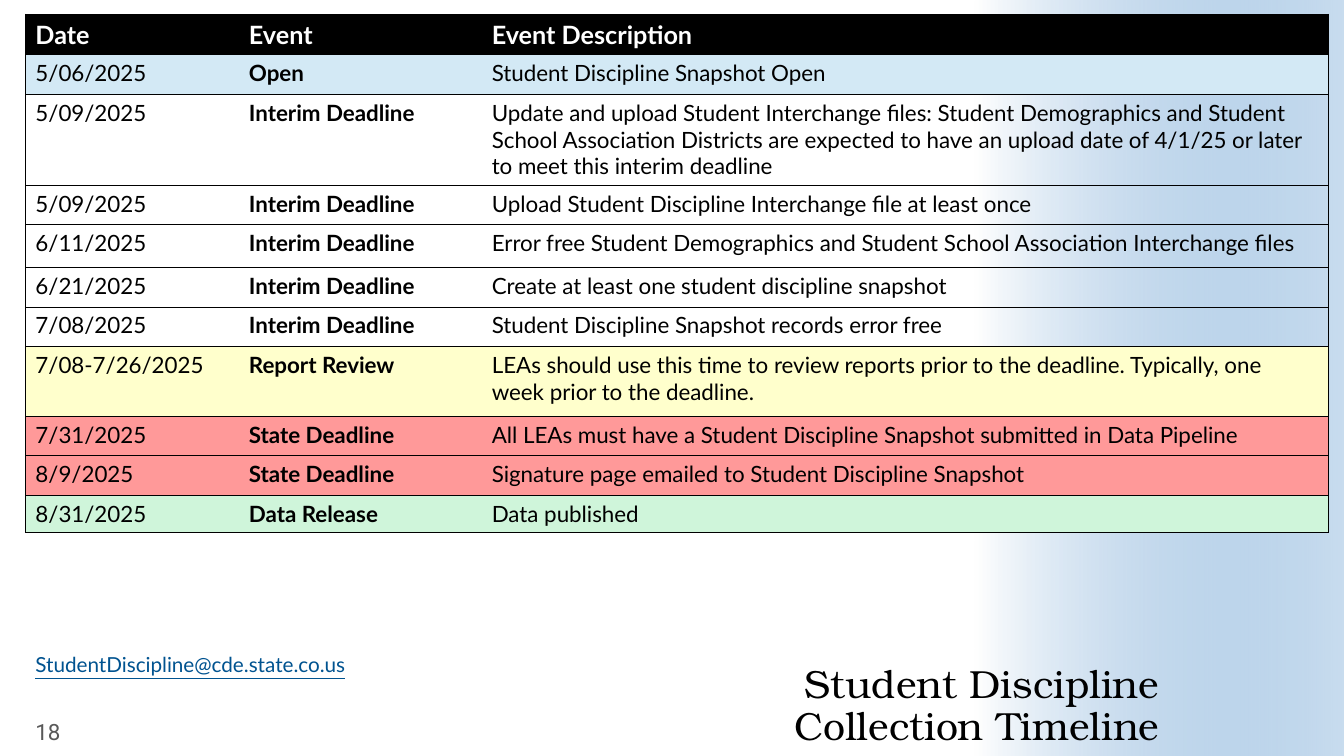
from copy import deepcopy
from dataclasses import dataclass

from lxml.etree import SubElement
from pptx import Presentation
from pptx.dml.color import RGBColor
from pptx.enum.shapes import MSO_SHAPE as Preset
from pptx.enum.text import MSO_ANCHOR as Anchor, MSO_AUTO_SIZE as AutoSize, PP_ALIGN as Align
from pptx.oxml.ns import qn
from pptx.util import Cm, Pt


@dataclass(frozen=True)
class Theme:
    black: str = "000000"
    white: str = "FFFFFF"
    grey: str = "595959"
    link: str = "005390"
    band: str = "488BC9"
    opened: str = "D3E9F5"
    review: str = "FFFFCC"
    deadline: str = "FF9999"
    release: str = "CFF5DA"
    title_font: str = "TeX Gyre Bonum"
    table_font: str = "Lato"
    number_font: str = "Roboto"
    title_size: float = 28
    header_size: float = 18
    body_size: float = 16
    contact_size: float = 14.8


theme = Theme()


def write_text(frame, text, *, font, size, color, bold=False, underline=False,
               align=Align.LEFT, spacing=1.0, anchor=Anchor.TOP):
    frame.word_wrap = True
    frame.vertical_anchor = anchor
    paragraph = frame.paragraphs[0]
    paragraph.text = text
    paragraph.alignment = align
    paragraph.line_spacing = spacing
    paragraph.space_before = Pt(0)
    for run in paragraph.runs:
        run.font.name = font
        run.font.size = Pt(size)
        run.font.bold = bold
        run.font.underline = underline
        run.font.color.rgb = RGBColor.from_string(color)
    # Line breaks take the same format as the text around them
    for line_break in paragraph._p.findall(qn("a:br")):
        line_break.insert(0, deepcopy(paragraph.runs[0]._r.rPr))
    return paragraph


def add_border(cell, side, color, width=0.5):
    line = SubElement(cell._tc.get_or_add_tcPr(), qn(f"a:ln{side}"), w=str(Pt(width)))
    SubElement(SubElement(line, qn("a:solidFill")), qn("a:srgbClr"), val=color)


presentation = Presentation()
presentation.slide_width, presentation.slide_height = Cm(33.87), Cm(19.05)
slide = presentation.slides.add_slide(presentation.slide_layouts[1])

# Gradient band behind everything
band = slide.shapes.add_shape(Preset.RECTANGLE, Cm(19.69), Cm(4.88), Cm(19.05), Cm(9.3))
band.rotation = 270
band.shadow.inherit = False
band.line.fill.background()
band.fill.gradient()
band.fill.gradient_angle = 270
for stop, color in zip(band.fill.gradient_stops, (theme.white, theme.band)):
    stop.color.rgb = RGBColor.from_string(color)
band_colors = list(band._element.spPr.iter(qn("a:srgbClr")))
SubElement(band_colors[-1], qn("a:alpha"), val="30000")
slide.shapes._spTree.insert(2, band._element)

# Title
title = slide.shapes.title
title.left, title.top, title.width, title.height = Cm(10.82), Cm(16.38), Cm(18.39), Cm(2.49)
title_frame = title.text_frame
title_frame.auto_size = AutoSize.NONE
title_frame.margin_left = title_frame.margin_right = 0
title_frame.margin_top = title_frame.margin_bottom = 0
write_text(title_frame, "Student Discipline\vCollection Timeline", font=theme.title_font,
           size=theme.title_size, color=theme.black, align=Align.RIGHT, spacing=0.9,
           anchor=Anchor.BOTTOM)

# Slide number
number = slide.shapes.add_textbox(Cm(0.64), Cm(18.03), Cm(2.16), Cm(0.79))
write_text(number.text_frame, "18", font=theme.number_font, size=theme.body_size,
           color=theme.grey, anchor=Anchor.MIDDLE)

# Contact address
contact = slide.placeholders[1]
contact.left, contact.top, contact.width, contact.height = Cm(0.64), Cm(16.43), Cm(9.88), Cm(0.79)
contact.text_frame.auto_size = AutoSize.NONE
contact_paragraph = write_text(contact.text_frame, "StudentDiscipline@cde.state.co.us",
                               font=theme.table_font, size=theme.contact_size,
                               color=theme.link, underline=True, spacing=0.8)
contact_format = contact_paragraph._p.get_or_add_pPr()
contact_format.set("marL", "0")
contact_format.set("indent", "0")
SubElement(contact_format, qn("a:buNone"))

# Timeline rows: height in cm, fill, date, event, description
timeline = [
    (1.0, theme.black, "Date", "Event", "Event Description"),
    (1.0, theme.opened, "5/06/2025", "Open", "Student Discipline Snapshot Open"),
    (2.23, None, "5/09/2025", "Interim Deadline",
     "Update and upload Student Interchange files: Student Demographics and Student School "
     "Association Districts are expected to have an upload date of 4/1/25 or later to meet "
     "this interim deadline"),
    (1.0, None, "5/09/2025", "Interim Deadline",
     "Upload Student Discipline Interchange file at least once"),
    (1.07, None, "6/11/2025", "Interim Deadline",
     "Error free Student Demographics and Student School Association Interchange files"),
    (1.0, None, "6/21/2025", "Interim Deadline", "Create at least one student discipline snapshot"),
    (1.0, None, "7/08/2025", "Interim Deadline", "Student Discipline Snapshot records error free"),
    (1.75, theme.review, "7/08-7/26/2025", "Report Review",
     "LEAs should use this time to review reports prior to the deadline. Typically, one week "
     "prior to the deadline."),
    (1.0, theme.deadline, "7/31/2025", "State Deadline",
     "All LEAs must have a Student Discipline Snapshot submitted in Data Pipeline"),
    (1.0, theme.deadline, "8/9/2025", "State Deadline",
     "Signature page emailed to Student Discipline Snapshot"),
    (0.9, theme.release, "8/31/2025", "Data Release", "Data published"),
]
column_widths = (5.38, 6.12, 21.34)

# Timeline table, without a built-in style
table_frame = slide.shapes.add_table(len(timeline), len(column_widths), Cm(0.64), Cm(0.36),
                                     Cm(sum(column_widths)), Cm(sum(row[0] for row in timeline)))
table = table_frame.table
table.horz_banding = False
table._tbl.tblPr.find(qn("a:tableStyleId")).text = "{2D5ABB26-0587-4C30-8999-92F81FD0307C}"
for column, width in zip(table.columns, column_widths):
    column.width = Cm(width)

for row_index, (height, fill, *texts) in enumerate(timeline):
    table.rows[row_index].height = Cm(height)
    is_header = row_index == 0
    for column_index, text in enumerate(texts):
        cell = table.cell(row_index, column_index)
        write_text(cell.text_frame, text, font=theme.table_font,
                   size=theme.header_size if is_header else theme.body_size,
                   color=theme.white if is_header else theme.black,
                   bold=is_header or column_index == 1)
        # Rules between rows, and a frame around the table
        if column_index == 0:
            add_border(cell, "L", theme.black)
        if column_index == len(texts) - 1:
            add_border(cell, "R", theme.black)
        for side in "TB":
            add_border(cell, side, theme.black)
        if fill:
            cell.fill.solid()
            cell.fill.fore_color.rgb = RGBColor.from_string(fill)
        else:
            cell.fill.background()

presentation.save("out.pptx")
